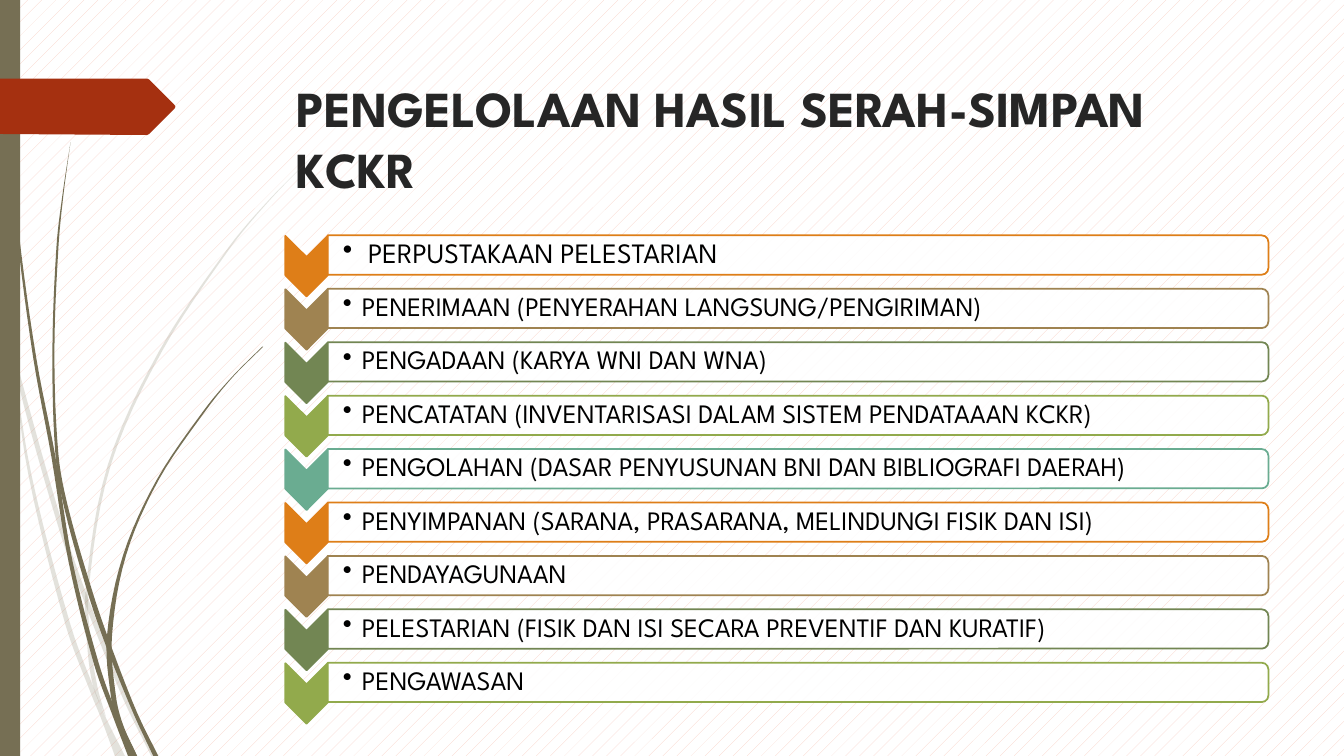
"""Builds the slide on managing KCKR legal deposits."""
from lxml.etree import SubElement
from pptx import Presentation
from pptx.dml.color import RGBColor
from pptx.enum.dml import MSO_PATTERN
from pptx.enum.shapes import MSO_SHAPE
from pptx.enum.text import MSO_ANCHOR, PP_ALIGN
from pptx.oxml.ns import qn
from pptx.util import Inches, Pt

TITLE = "PENGELOLAAN HASIL SERAH-SIMPAN KCKR"
STEPS = [
    "PERPUSTAKAAN PELESTARIAN",
    "PENERIMAAN (PENYERAHAN LANGSUNG/PENGIRIMAN)",
    "PENGADAAN (KARYA WNI DAN WNA)",
    "PENCATATAN (INVENTARISASI DALAM SISTEM PENDATAAAN KCKR)",
    "PENGOLAHAN (DASAR PENYUSUNAN BNI DAN BIBLIOGRAFI DAERAH)",
    "PENYIMPANAN (SARANA, PRASARANA, MELINDUNGI FISIK DAN ISI)",
    "PENDAYAGUNAAN",
    "PELESTARIAN (FISIK DAN ISI SECARA PREVENTIF DAN KURATIF)",
    "PENGAWASAN",
]
STEP_COLORS = ["DE7E18", "9F8351", "728653", "92AA4C", "6AAC91"]
FONT = "League Spartan"
OLIVE, RED, WHITE = "766F54", "A53010", "FFFFFF"

# Each blade of grass is a list of (height, left edge, right edge).
PALE_BLADES = [
    [(2.82, 0, 0), (2.99, 0, .04), (3.5, .11, .12), (4.7, .28, .31), (6.2, .65, .7),
     (6.9, .91, .96), (7.12, 1, 1.05), (7.5, 1.14, 1.24)],
    [(3.45, .14, .14), (3.76, .17, .21), (5.2, .57, .62), (5.98, .84, .89),
     (6.93, 1.22, 1.28), (7.5, 1.5, 1.55)],
    [(1.53, 3.12, 3.12), (1.97, 2.68, 2.69), (2.45, 2.27, 2.29), (3.48, 1.58, 1.61),
     (4.61, 1.07, 1.1), (5.85, .85, .88), (6.46, .87, .91), (6.83, .93, .97),
     (7.11, 1.05, 1.05)],
]
DARK_BLADES = [
    [(0, .03, .04), (1.1, .07, .08), (2.33, .17, .19), (3.55, .33, .36), (4.53, .51, .55),
     (5.57, .68, .72), (6.58, .93, .98), (7.08, 1.11, 1.16), (7.5, 1.27, 1.36)],
    [(1.41, .7, .7), (1.93, .62, .63), (2.45, .56, .58), (3.49, .52, .54), (4.51, .55, .58),
     (5.05, .64, .68), (5.91, .88, .93), (6.43, 1.06, 1.11), (7.07, 1.32, 1.36),
     (7.5, 1.52, 1.57)],
    [(3.44, 2.6, 2.61), (3.74, 2.3, 2.31), (4.06, 2.03, 2.05), (4.75, 1.56, 1.58),
     (5.51, 1.22, 1.25), (6.32, 1.06, 1.11), (6.91, 1.1, 1.15), (7.19, 1.17, 1.22),
     (7.5, 1.29, 1.36)],
]
RIBBON = [(0, .78), (1.46, .78), (1.48, .79), (1.73, 1.04), (1.74, 1.06), (1.73, 1.08),
          (1.48, 1.33), (1.46, 1.34), (0, 1.33)]

FIRST_ROW, ROW_PITCH = 2.53, .53
BAR_LEFT, BAR_WIDTH, BAR_HEIGHT = 3.25, 9.33, .39
CHEVRON_CENTER, CHEVRON_DROP = 3.04, .11
CHEVRON_LENGTH, CHEVRON_WIDTH = .6, .42
SAMPLES = 6


def color(hex_string):
    return RGBColor.from_string(hex_string)


def paint(shape, fill, line=None, opacity=100):
    shape.shadow.inherit = False
    shape.fill.solid()
    shape.fill.fore_color.rgb = color(fill)
    if opacity < 100:
        tint = shape.fill._xPr.find(qn("a:solidFill"))[0]
        SubElement(tint, qn("a:alpha"), val=str(opacity * 1000))
    if line:
        shape.line.color.rgb = color(line)
        shape.line.width = Pt(1.25)
    else:
        shape.line.fill.background()


def add_outline(page, points, fill, opacity=100):
    corners = [(Inches(x), Inches(y)) for x, y in points]
    builder = page.shapes.build_freeform(*corners[0])
    builder.add_line_segments(corners[1:], close=True)
    paint(builder.convert_to_shape(), fill, opacity=opacity)


def smooth_edge(knots):
    slopes = []
    for index in range(len(knots)):
        (y0, x0), (y1, x1) = knots[max(index - 1, 0)], knots[min(index + 1, len(knots) - 1)]
        slopes.append((x1 - x0) / (y1 - y0))
    points = []
    for (y0, x0), (y1, x1), m0, m1 in zip(knots, knots[1:], slopes, slopes[1:]):
        span = y1 - y0
        for step in range(SAMPLES):
            t = step / SAMPLES
            x = (x0 * (1 + 2 * t) * (1 - t) ** 2 + x1 * t * t * (3 - 2 * t)
                 + span * (m0 * t * (1 - t) ** 2 - m1 * t * t * (1 - t)))
            points.append((max(x, 0), y0 + span * t))
    return points + [(knots[-1][1], knots[-1][0])]


def add_blade(page, stations, opacity):
    left = smooth_edge([(y, x) for y, x, _ in stations])
    right = smooth_edge([(y, x) for y, _, x in stations])
    add_outline(page, left + right[::-1], OLIVE, opacity)


def add_turned(page, kind, center_x, center_y, width, height):
    shape = page.shapes.add_shape(kind, Inches(center_x - width / 2), Inches(center_y - height / 2),
                                  Inches(width), Inches(height))
    shape.rotation = 90
    return shape


def write(para, text, size, hex_string, bold=False):
    span = para.add_run()
    span.text = text
    span.font.name, span.font.size, span.font.bold = FONT, Pt(size), bold
    span.font.color.rgb = color(hex_string)


def add_step(page, index, text):
    middle = FIRST_ROW + index * ROW_PITCH
    accent = STEP_COLORS[index % len(STEP_COLORS)]
    size, indent = (20, .25) if index == 0 else (19, .19)
    chevron = add_turned(page, MSO_SHAPE.CHEVRON, CHEVRON_CENTER, middle + CHEVRON_DROP,
                         CHEVRON_LENGTH, CHEVRON_WIDTH)
    paint(chevron, accent, accent)
    bar = add_turned(page, MSO_SHAPE.ROUND_2_SAME_RECTANGLE, BAR_LEFT + BAR_WIDTH / 2, middle,
                     BAR_HEIGHT, BAR_WIDTH)
    paint(bar, WHITE, accent, opacity=90)
    box = page.shapes.add_textbox(Inches(BAR_LEFT), Inches(middle - .18), Inches(9.31), Inches(.35))
    frame = box.text_frame
    frame.word_wrap, frame.vertical_anchor = True, MSO_ANCHOR.MIDDLE
    frame.margin_left = Inches(.15)
    frame.margin_right = frame.margin_top = frame.margin_bottom = Inches(.01)
    para = frame.paragraphs[0]
    para.line_spacing = .9
    write(para, text, size, "000000")
    settings = para._p.get_or_add_pPr()
    settings.set("marL", str(Inches(indent)))
    settings.set("indent", str(-Inches(indent)))
    SubElement(settings, qn("a:buChar"), char="•")


def main():
    deck = Presentation()
    deck.slide_width, deck.slide_height = Inches(13.33), Inches(7.5)
    page = deck.slides.add_slide(deck.slide_layouts[5])
    backdrop = page.background.fill
    backdrop.patterned()
    backdrop.pattern = MSO_PATTERN.PERCENT_5
    backdrop.fore_color.rgb, backdrop.back_color.rgb = color("F9CFC3"), color(WHITE)

    for blades, opacity in ((PALE_BLADES, 20), (DARK_BLADES, 100)):
        for stations in blades:
            add_blade(page, stations, opacity)
    side = page.shapes.add_shape(MSO_SHAPE.RECTANGLE, 0, 0, Inches(.2), deck.slide_height)
    paint(side, OLIVE)
    add_outline(page, RIBBON, RED)

    title = page.shapes.title
    title.left, title.top, title.width, title.height = map(Inches, (2.84, .68, 9.75, 1.38))
    title.text_frame.vertical_anchor = MSO_ANCHOR.MIDDLE
    heading = title.text_frame.paragraphs[0]
    heading.alignment = PP_ALIGN.LEFT
    write(heading, TITLE, 36, "262626", bold=True)

    for index, text in enumerate(STEPS):
        add_step(page, index, text)
    deck.save("out.pptx")


if __name__ == "__main__":
    main()
